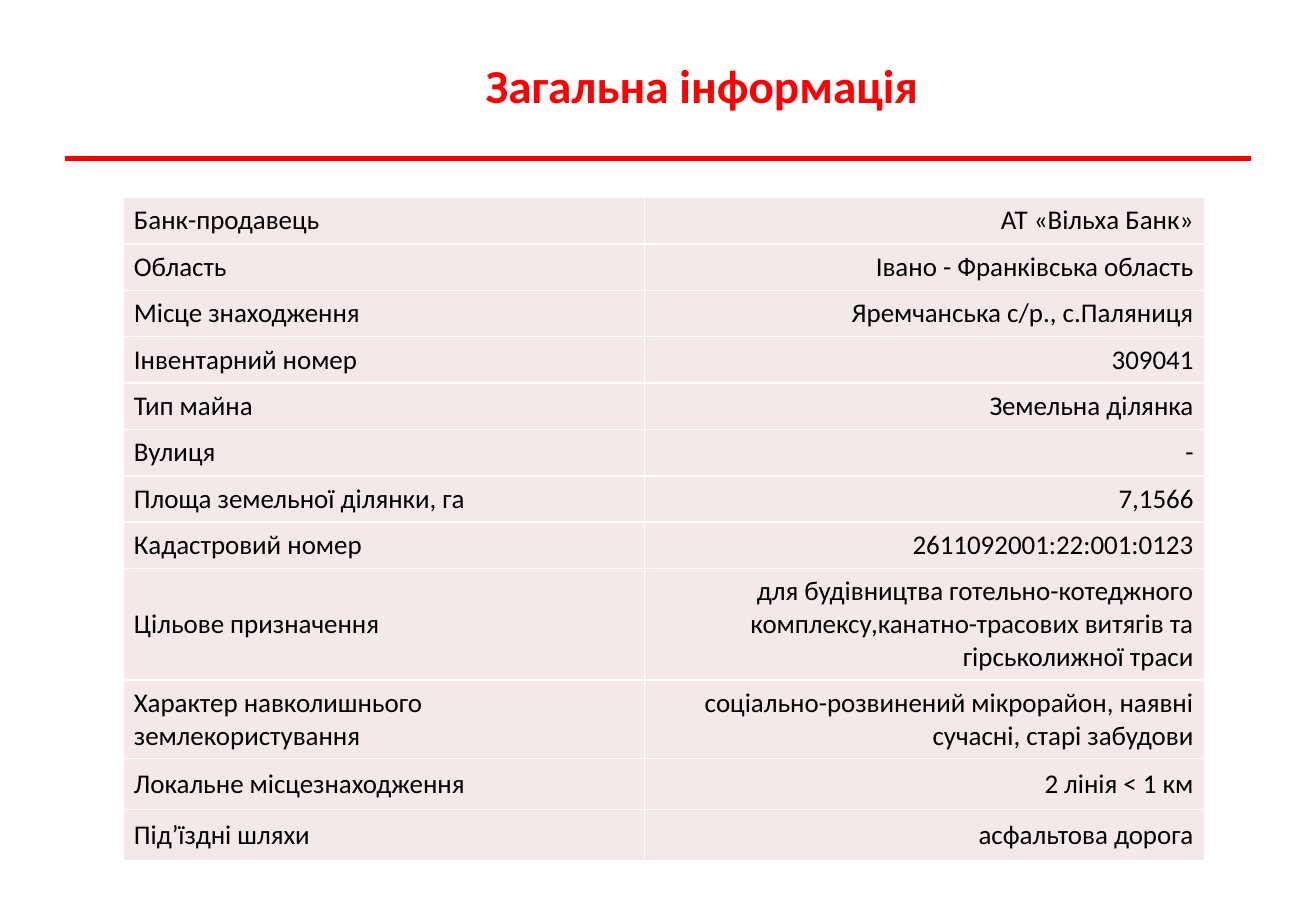
import dataclasses
import typing

import lxml.etree
import pptx
import pptx.dml.color
import pptx.enum.dml
import pptx.enum.shapes
import pptx.enum.text
import pptx.oxml.ns
import pptx.table
import pptx.text.text
import pptx.util

Cm = pptx.util.Cm
Pt = pptx.util.Pt
Align = pptx.enum.text.PP_ALIGN
Anchor = pptx.enum.text.MSO_ANCHOR
qn = pptx.oxml.ns.qn

RED = "FF0000"
BLACK = "000000"
WHITE = "FFFFFF"
ROSE = "F4E9E9"
FACE = "Calibri"


@dataclasses.dataclass(frozen=True)
class Fact:
    label: str
    value: str
    height: float = 0.97


FACTS = [
    Fact("Банк-продавець", "АТ «Вільха Банк»"),
    Fact("Область", "Івано - Франківська область"),
    Fact("Місце знаходження", "Яремчанська с/р., с.Паляниця"),
    Fact("Інвентарний номер", "309041"),
    Fact("Тип майна", "Земельна ділянка"),
    Fact("Вулиця", "-"),
    Fact("Площа земельної ділянки, га", "7,1566"),
    Fact("Кадастровий номер", "2611092001:22:001:0123"),
    Fact(
        "Цільове призначення",
        "для будівництва готельно-котеджного комплексу,"
        "канатно-трасових витягів та гірськолижної траси",
        2.16,
    ),
    Fact(
        "Характер навколишнього землекористування",
        "соціально-розвинений мікрорайон, наявні сучасні, старі забудови",
        1.52,
    ),
    Fact("Локальне місцезнаходження", "2 лінія < 1 км", 1.07),
    Fact("Під’їздні шляхи", "асфальтова дорога", 1.07),
]
WIDTHS = (10.9, 11.71)
SIDES = (Align.LEFT, Align.RIGHT)
CELL = {
    "vertical_anchor": Anchor.MIDDLE,
    "margin_left": Cm(0.23),
    "margin_right": Cm(0.23),
    "margin_top": Cm(0.13),
    "margin_bottom": Cm(0.13),
}


def put(item: typing.Any, form: dict[str, typing.Any]) -> None:
    """Set each attribute named in form."""
    for name, value in form.items():
        setattr(item, name, value)


def color(text: str) -> pptx.dml.color.RGBColor:
    return pptx.dml.color.RGBColor.from_string(text)


def write(frame: pptx.text.text.TextFrame, text: str, size: float,
          tone: str, align: Align, bold: bool = False) -> None:
    frame.text = text
    par = frame.paragraphs[0]
    par.alignment = align
    put(par.font, {"name": FACE, "size": Pt(size), "bold": bold})
    par.font.color.rgb = color(tone)


def edge(cell: pptx.table._Cell, tone: str, width: float) -> None:
    """Line all four sides of a cell; call before its fill is set."""
    props = cell._tc.get_or_add_tcPr()
    for side in ("lnL", "lnR", "lnT", "lnB"):
        line = lxml.etree.SubElement(props, qn(f"a:{side}"), w=str(Pt(width)))
        fill = lxml.etree.SubElement(line, qn("a:solidFill"))
        lxml.etree.SubElement(fill, qn("a:srgbClr"), val=tone)


def head(slide: typing.Any) -> None:
    title = slide.shapes.title
    put(title, {"left": Cm(4.37), "top": Cm(0.74),
                "width": Cm(20.6), "height": Cm(2.06)})
    put(title.text_frame, {"vertical_anchor": Anchor.MIDDLE, "word_wrap": True})
    write(title.text_frame, "Загальна інформація", 28, RED, Align.CENTER, True)


def rule(slide: typing.Any) -> None:
    line = slide.shapes.add_connector(
        pptx.enum.shapes.MSO_CONNECTOR.STRAIGHT,
        Cm(1.35), Cm(3.32), Cm(26.16), Cm(3.32))
    line.line.color.rgb = color(RED)
    line.line.width = Pt(3)
    lxml.etree.SubElement(line._element.spPr, qn("a:effectLst"))


def grid(slide: typing.Any) -> None:
    high = sum(fact.height for fact in FACTS)
    table = slide.shapes.add_table(
        len(FACTS), len(WIDTHS), Cm(2.57), Cm(4.13),
        Cm(sum(WIDTHS)), Cm(high)).table
    put(table, {"first_row": False, "horz_banding": False})
    for col, width in zip(table.columns, WIDTHS):
        col.width = Cm(width)
    for row, fact in zip(table.rows, FACTS):
        row.height = Cm(fact.height)
        for cell, text, side in zip(row.cells, (fact.label, fact.value), SIDES):
            put(cell, CELL)
            edge(cell, WHITE, 1)
            cell.fill.solid()
            cell.fill.fore_color.rgb = color(ROSE)
            write(cell.text_frame, text, 16, BLACK, side)


def main() -> None:
    deck = pptx.Presentation()
    put(deck, {"slide_width": Cm(27.51), "slide_height": Cm(19.05)})
    slide = deck.slides.add_slide(deck.slide_layouts[5])
    head(slide)
    rule(slide)
    grid(slide)
    deck.save("out.pptx")


if __name__ == "__main__":
    main()
